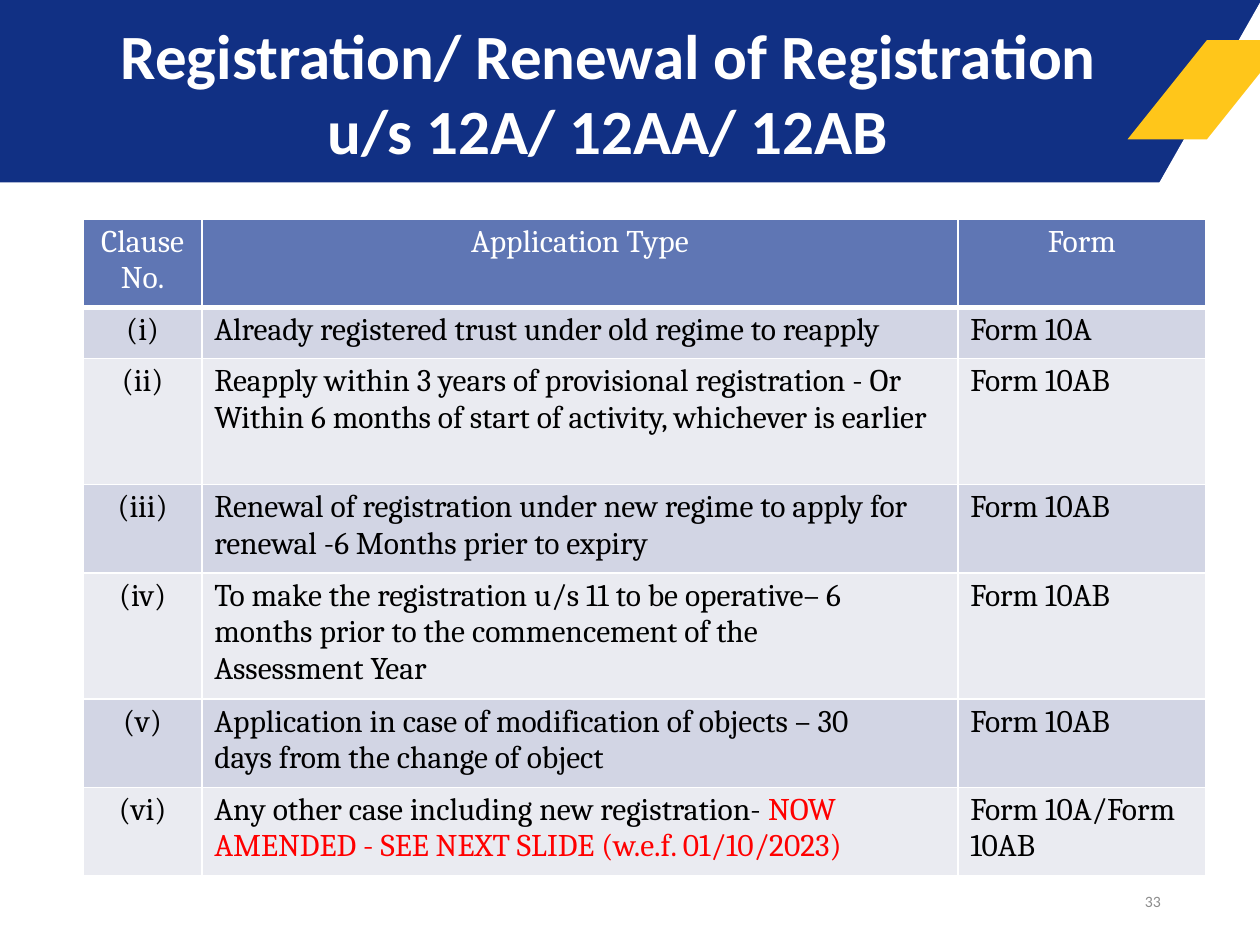
from dataclasses import dataclass

from lxml import etree
from pptx import Presentation
from pptx import util as u
from pptx.dml.color import RGBColor
from pptx.enum import shapes, text
from pptx.oxml.ns import qn


@dataclass(frozen=True)
class Theme:
    navy: str = "113084"
    gold: str = "FFC61A"
    white: str = "FFFFFF"
    black: str = "000000"
    alert: str = "FF0000"
    muted: str = "8C8C8C"
    header: str = "5F76B4"
    bands: tuple = ("D2D5E4", "EAEBF1")
    heading_font: str = "Calibri"
    table_font: str = "Cambria"
    title_size: int = 36
    table_size: int = 18
    number_size: int = 9


class Deck:
    def __init__(self, theme):
        self.theme = theme
        self.file = Presentation()
        self.file.slide_width, self.file.slide_height = u.Cm(25.4), u.Cm(19.05)
        self.slide = self.file.slides.add_slide(self.file.slide_layouts[6])

    def paint(self, shape, color):
        shape.shadow.inherit = False
        shape.fill.solid()
        shape.fill.fore_color.rgb = RGBColor.from_string(color)
        shape.line.fill.background()

    def band(self, left, top, width, height, color):
        box = [u.Cm(v) for v in (left, top, width, height)]
        self.paint(self.slide.shapes.add_shape(shapes.MSO_SHAPE.RECTANGLE, *box), color)

    def slanted(self, left, top, width, height, color, slant=1.6):
        right, bottom = left + width, top + height
        corners = [(left + slant, top), (right, top), (right - slant, bottom), (left, bottom)]
        points = [(u.Cm(x), u.Cm(y)) for x, y in corners]
        outline = self.slide.shapes.build_freeform(*points[0])
        outline.add_line_segments(points[1:], close=True)
        self.paint(outline.convert_to_shape(), color)

    def add_runs(self, paragraph, runs, font, size, align, bold=False):
        paragraph.alignment = align
        for wording, color in runs:
            run = paragraph.add_run()
            run.text = wording
            run.font.name, run.font.size, run.font.bold = font, u.Pt(size), bold
            run.font.color.rgb = RGBColor.from_string(color)

    def label(self, box, wording, color, size, align, bold=False, insets=(0.25, 0.13, 0.25, 0.13)):
        frame = self.slide.shapes.add_textbox(*[u.Cm(v) for v in box]).text_frame
        frame.word_wrap = True
        frame.vertical_anchor = text.MSO_ANCHOR.MIDDLE
        (frame.margin_left, frame.margin_top,
         frame.margin_right, frame.margin_bottom) = [u.Cm(v) for v in insets]
        self.add_runs(frame.paragraphs[0], [(wording, color)], self.theme.heading_font, size, align, bold)

    def borders(self, cell, widths):
        properties = cell._tc.get_or_add_tcPr()
        for place, (side, points) in enumerate(zip("LRTB", widths)):
            line = etree.Element(qn(f"a:ln{side}"), w=str(u.Pt(points)))
            fill = etree.SubElement(line, qn("a:solidFill"))
            etree.SubElement(fill, qn("a:srgbClr"), val=self.theme.white)
            properties.insert(place, line)

    def cell(self, cell, paragraphs, fill, align, widths, right=0):
        cell.fill.solid()
        cell.fill.fore_color.rgb = RGBColor.from_string(fill)
        cell.margin_left = u.Cm(0.25 if align == text.PP_ALIGN.LEFT else 0)
        cell.margin_top, cell.margin_right, cell.margin_bottom = u.Cm(0.1), u.Cm(right), 0
        for index, runs in enumerate(paragraphs):
            frame = cell.text_frame
            paragraph = frame.add_paragraph() if index else frame.paragraphs[0]
            paragraph.space_before = u.Pt(0 if index else 3.1)
            self.add_runs(paragraph, runs, self.theme.table_font, self.theme.table_size, align)
        self.borders(cell, widths)

    def table(self, left, top, widths, heights, headings, clauses):
        t = self.theme
        grid = self.slide.shapes.add_table(
            len(heights), len(widths), u.Cm(left), u.Cm(top),
            u.Cm(sum(widths)), u.Cm(sum(heights))).table
        for column, width in zip(grid.columns, widths):
            column.width = u.Cm(width)
        for row, height in zip(grid.rows, heights):
            row.height = u.Cm(height)
        center, left_align = text.PP_ALIGN.CENTER, text.PP_ALIGN.LEFT
        for c, lines in enumerate(headings):
            paragraphs = [[(line, t.white)] for line in lines]
            self.cell(grid.cell(0, c), paragraphs, t.header, center, (1, 1, 1, 3))
        for r, (number, application, form, right) in enumerate(clauses, 1):
            edges = (1, 1, 3 if r == 1 else 1, 1)
            fill = t.bands[(r - 1) % 2]
            self.cell(grid.cell(r, 0), [[(number, t.black)]], fill, center, edges)
            self.cell(grid.cell(r, 1), [application], fill, left_align, edges, right)
            self.cell(grid.cell(r, 2), [[(form, t.black)]], fill, left_align, edges)


def main():
    theme = Theme()
    deck = Deck(theme)
    deck.band(0, 0, 25.4, 3.68, theme.navy)
    deck.slanted(24.41, -1.02, 6.07, 2.82, theme.white)
    deck.slanted(23.14, 1.27, 6.81, 2.82, theme.white)
    deck.slanted(22.73, 0.81, 3.2, 2, theme.gold)

    plain = theme.black
    clauses = [
        ("(i)", [("Already registered trust under old regime to reapply", plain)], "Form 10A", 0),
        ("(ii)", [("Reapply within 3 years of provisional registration - Or ", plain),
                  ("Within 6 months of start of activity, whichever is earlier", plain)], "Form 10AB", 0),
        ("(iii)", [("Renewal of registration under new regime to apply for ", plain),
                   ("renewal -6 Months prier to expiry", plain)], "Form 10AB", 0),
        ("(iv)", [("To make the registration u/s 11 to be operative– 6 ", plain),
                  ("months prior to the commencement of the ", plain),
                  ("Assessment Year", plain)], "Form 10AB", 1.9),
        ("(v)", [("Application in case of modification of objects – 30 ", plain),
                 ("days from the change of object", plain)], "Form 10AB", 1.9),
        ("(vi)", [("Any other case including new registration- ", plain),
                  ("NOW AMENDED - SEE NEXT SLIDE (w.e.f. 01/10/2023)", theme.alert)],
         "Form 10A/Form 10AB", 0),
    ]
    single, double, triple = 1.03, 1.78, 2.54
    deck.table(1.68, 4.42, (2.39, 15.24, 5),
               (double, single, triple, double, triple, double, double),
               (("Clause", "No."), ("Application Type",), ("Form",)), clauses)

    deck.label((17.93, 17.65, 5.72, 1.02), "33", theme.muted, theme.number_size, text.PP_ALIGN.RIGHT)
    deck.label((1.47, -0.2, 21.59, 3.61), "Registration/ Renewal of Registration u/s 12A/ 12AA/ 12AB",
               theme.white, theme.title_size, text.PP_ALIGN.CENTER, True, (0.6, 0.5, 0.6, 0))
    deck.file.save("out.pptx")


if __name__ == "__main__":
    main()
